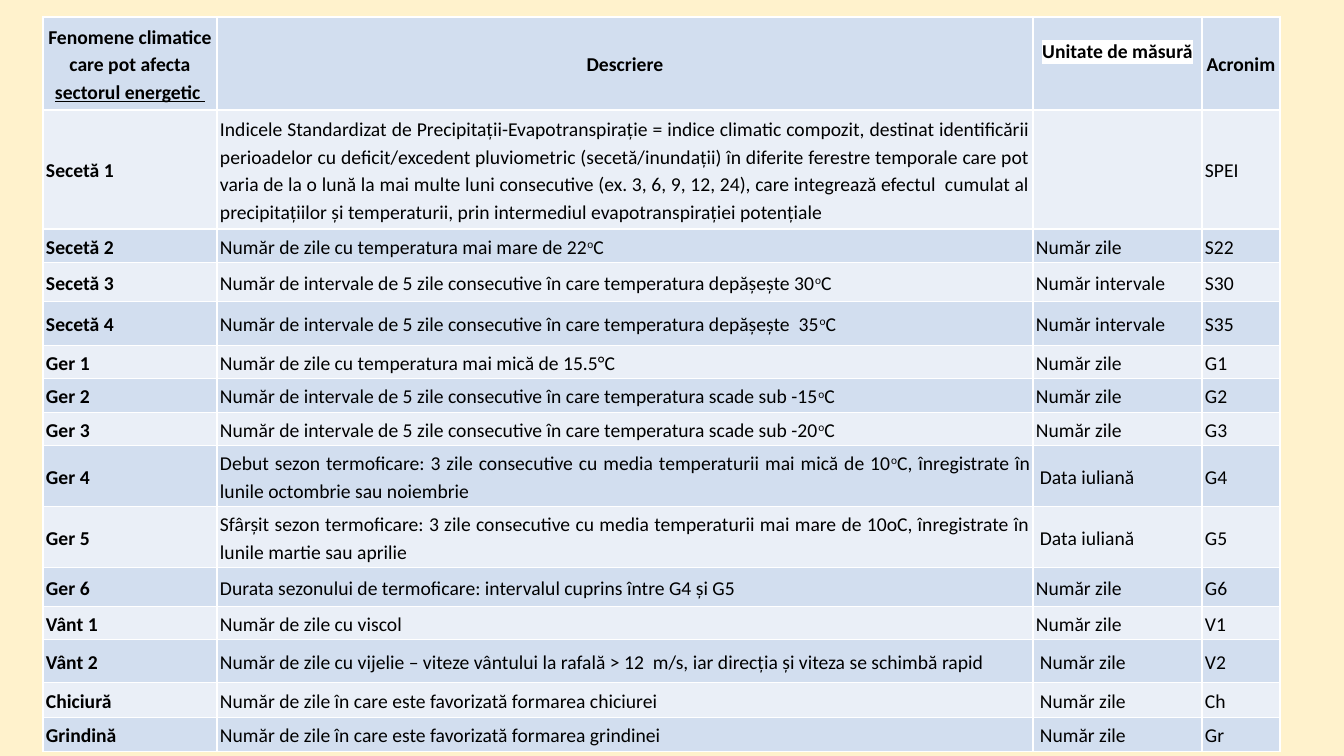
from lxml.etree import SubElement, fromstring
from pptx import Presentation
from pptx.dml.color import RGBColor
from pptx.enum.text import MSO_ANCHOR, PP_ALIGN
from pptx.oxml.ns import qn
from pptx.util import Pt

# Content: "^" encloses superscript, "_" encloses underlined text
HEADS = [
    "Fenomene climatice care pot afecta _sectorul energetic _",
    "Descriere", "Unitate de măsură", "Acronim",
]
ROWS = [
    ("Secetă 1", "Indicele Standardizat de Precipitații-Evapotranspirație = indice climatic "
     "compozit, destinat identificării perioadelor cu deficit/excedent pluviometric "
     "(secetă/inundații) în diferite ferestre temporale care pot varia de la o lună la mai "
     "multe luni consecutive (ex. 3, 6, 9, 12, 24), care integrează efectul  cumulat al "
     "precipitațiilor și temperaturii, prin intermediul evapotranspirației potențiale",
     "", "SPEI"),
    ("Secetă 2", "Număr de zile cu temperatura mai mare de 22^o^C", "Număr zile", "S22"),
    ("Secetă 3", "Număr de intervale de 5 zile consecutive în care temperatura depășește 30^o^C",
     "Număr intervale", "S30"),
    ("Secetă 4", "Număr de intervale de 5 zile consecutive în care temperatura depășește  35^o^C",
     "Număr intervale", "S35"),
    ("Ger 1", "Număr de zile cu temperatura mai mică de 15.5°C", "Număr zile", "G1"),
    ("Ger 2", "Număr de intervale de 5 zile consecutive în care temperatura scade sub -15^o^C",
     "Număr zile", "G2"),
    ("Ger 3", "Număr de intervale de 5 zile consecutive în care temperatura scade sub -20^o^C",
     "Număr zile", "G3"),
    ("Ger 4", "Debut sezon termoficare: 3 zile consecutive cu media temperaturii mai mică de "
     "10^o^C, înregistrate în lunile octombrie sau noiembrie", "Data iuliană", "G4"),
    ("Ger 5", "Sfârșit sezon termoficare: 3 zile consecutive cu media temperaturii mai mare de "
     "10oC, înregistrate în lunile martie sau aprilie", "Data iuliană", "G5"),
    ("Ger 6", "Durata sezonului de termoficare: intervalul cuprins între G4 și G5",
     "Număr zile", "G6"),
    ("Vânt 1", "Număr de zile cu viscol", "Număr zile", "V1"),
    ("Vânt 2", "Număr de zile cu vijelie – viteze vântului la rafală > 12  m/s, iar direcția "
     "și viteza se schimbă rapid", "Număr zile", "V2"),
    ("Chiciură", "Număr de zile în care este favorizată formarea chiciurei", "Număr zile", "Ch"),
    ("Grindină", "Număr de zile în care este favorizată formarea grindinei", "Număr zile", "Gr"),
]
INDENT = {"G4", "G5", "V2", "Ch", "Gr"}

# Sizes in px
WIDTHS = [174, 816, 169, 78]
HEIGHTS = [93, 119, 33, 39, 44, 33, 33, 33, 61, 60, 39, 33, 43, 35, 33]
LEFT, TOP, PAD = 43, 17, 3
SHIFT, LINE = 4, 27
BANDS = ["D2DEEF", "EAEFF7"]


def px(n):
    return round(n * 914400 / 100.8)


def color(code):
    return RGBColor.from_string(code)


def border(cell):
    props = cell._tc.get_or_add_tcPr()
    for i, side in enumerate(("lnL", "lnR", "lnT", "lnB")):
        line = props.makeelement(qn("a:" + side), {"w": str(Pt(1))})
        fill = SubElement(line, qn("a:solidFill"))
        SubElement(fill, qn("a:srgbClr"), val="FFFFFF")
        props.insert(i, line)


def shade(run, code):
    mark = fromstring(
        '<a:highlight xmlns:a="http://schemas.openxmlformats.org/drawingml/2006/main">'
        f'<a:srgbClr val="{code}"/></a:highlight>')
    run._r.get_or_add_rPr().find(qn("a:solidFill")).addnext(mark)


def write(para, text, bold):
    sign = "_" if "_" in text else "^"
    for i, part in enumerate(text.split(sign)):
        if not part:
            continue
        run = para.add_run()
        run.text = part
        font = run.font
        font.size, font.name, font.bold = Pt(14), "Calibri", bold
        font.color.rgb = color("000000")
        if i % 2 and sign == "_":
            font.underline = True
        elif i % 2:
            run._r.get_or_add_rPr().set("baseline", "30000")


# Slide and background
deck = Presentation()
deck.slide_width, deck.slide_height = px(1344), px(756)
slide = deck.slides.add_slide(deck.slide_layouts[6])
slide.background.fill.solid()
slide.background.fill.fore_color.rgb = color("FFF2CC")

# Table grid
data = [HEADS] + ROWS
table = slide.shapes.add_table(
    len(data), len(WIDTHS), px(LEFT), px(TOP), px(sum(WIDTHS)), px(sum(HEIGHTS))).table
table.first_row = table.horz_banding = False
for col, width in zip(table.columns, WIDTHS):
    col.width = px(width)
for row, height in zip(table.rows, HEIGHTS):
    row.height = px(height)

# Cells
for r, items in enumerate(data):
    for c, text in enumerate(items):
        cell = table.cell(r, c)
        cell.fill.solid()
        cell.fill.fore_color.rgb = color(BANDS[r % 2])
        border(cell)
        cell.margin_left = cell.margin_right = px(PAD)
        cell.margin_top = cell.margin_bottom = px(PAD)
        last = r == len(data) - 1
        cell.vertical_anchor = MSO_ANCHOR.TOP if last else MSO_ANCHOR.MIDDLE
        para = cell.text_frame.paragraphs[0]
        para.alignment = PP_ALIGN.JUSTIFY if r else PP_ALIGN.CENTER
        para.line_spacing = 1.15
        write(para, text, r == 0 or c == 0)
        if c == 2 and items[3] in INDENT:
            cell.margin_left = px(PAD + SHIFT)

# Highlighted unit heading, raised by one line
unit = table.cell(0, 2)
unit.margin_bottom = px(PAD + LINE)
shade(unit.text_frame.paragraphs[0].runs[0], "FFFFFF")

deck.save("out.pptx")
